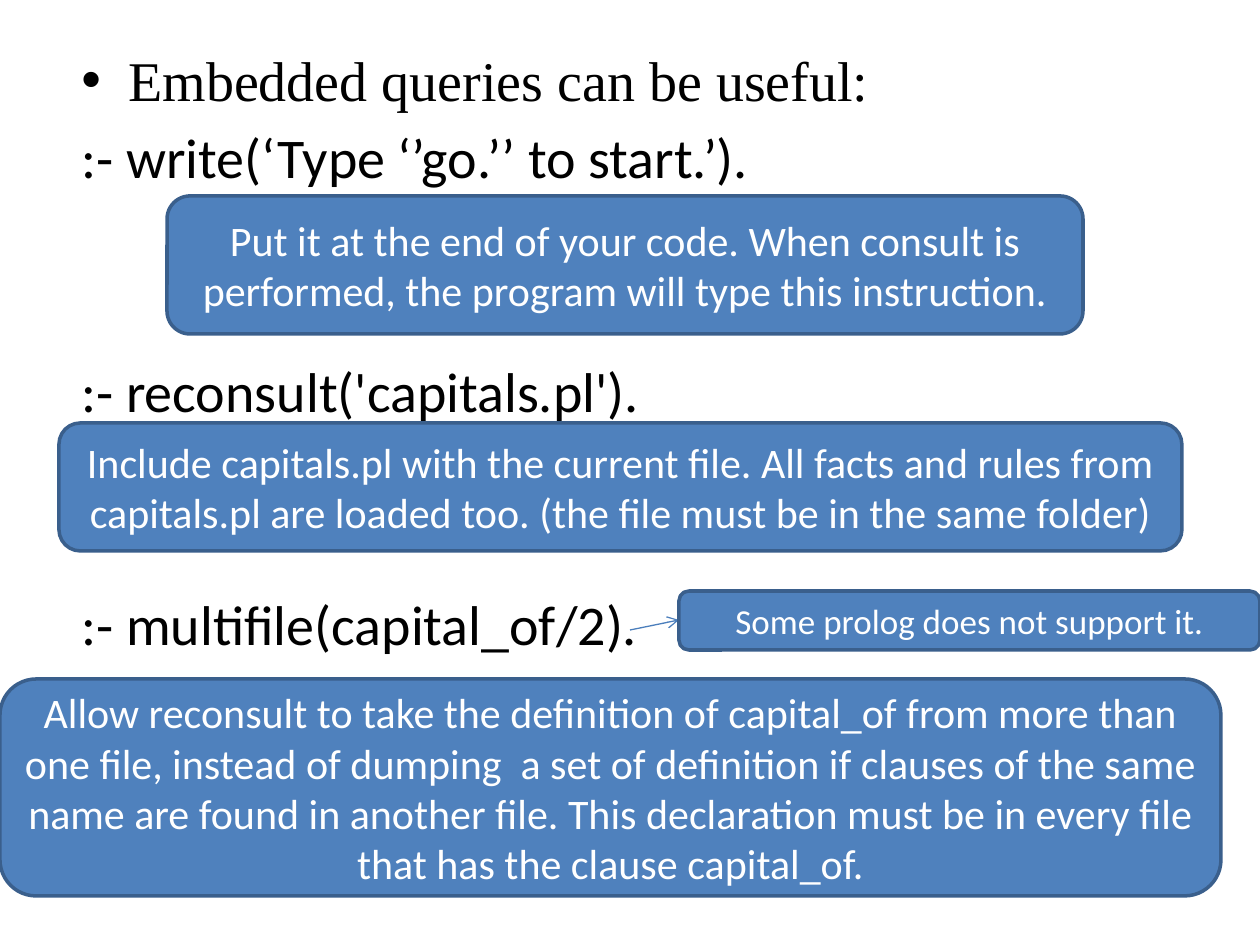
from lxml.etree import SubElement
from pptx import Presentation
from pptx.dml.color import RGBColor
from pptx.enum.shapes import MSO_CONNECTOR as Connector, MSO_SHAPE as Shape
from pptx.enum.text import MSO_ANCHOR as Anchor, PP_ALIGN as Align
from pptx.oxml.ns import qn
from pptx.util import Emu, Pt

PX = 914400 / 126


def px(length):
    return Emu(round(length * PX))


def color(hex_code):
    return RGBColor.from_string(hex_code)


def write(para, text, size=32, font="Calibri", ink="000000", align=Align.LEFT, before=0):
    para.alignment = align
    para.space_before = Pt(before)
    span = para.add_run()
    span.text = text
    span.font.size = Pt(size)
    span.font.name = font
    span.font.color.rgb = color(ink)


class Slide:
    fill, border, arrow_ink, callout_ink = "4F81BD", "3A5F8C", "4B7EBC", "FFFFFF"
    hanging = 47

    def __init__(self, deck):
        self.page = deck.slides.add_slide(deck.slide_layouts[6])

    def body(self, left, top, width, height, lines):
        box = self.page.shapes.add_textbox(px(left), px(top), px(width), px(height))
        frame = box.text_frame
        frame.word_wrap = True
        for index, (text, bullet, style) in enumerate(lines):
            para = frame.add_paragraph() if index else frame.paragraphs[0]
            write(para, text, **style)
            props = para._p.get_or_add_pPr()
            props.set("marL", str(px(self.hanging)))
            props.set("indent", str(-px(self.hanging)))
            if bullet:
                SubElement(props, qn("a:buFont")).set("typeface", "Arial")
                SubElement(props, qn("a:buChar")).set("char", bullet)
            else:
                SubElement(props, qn("a:buNone"))

    def callout(self, left, top, width, height, text, size=24):
        box = self.page.shapes.add_shape(
            Shape.ROUNDED_RECTANGLE, px(left), px(top), px(width), px(height))
        box.shadow.inherit = False
        box.fill.solid()
        box.fill.fore_color.rgb = color(self.fill)
        box.line.color.rgb = color(self.border)
        box.line.width = Pt(2)
        frame = box.text_frame
        frame.word_wrap = True
        frame.vertical_anchor = Anchor.MIDDLE
        write(frame.paragraphs[0], text, size=size, ink=self.callout_ink, align=Align.CENTER)

    def arrow(self, x1, y1, x2, y2):
        line = self.page.shapes.add_connector(
            Connector.STRAIGHT, px(x1), px(y1), px(x2), px(y2))
        line.line.color.rgb = color(self.arrow_ink)
        line.line.width = Pt(0.75)
        SubElement(line.line._get_or_add_ln(), qn("a:tailEnd")).set("type", "arrow")
        SubElement(line._element.spPr, qn("a:effectLst"))


def main():
    deck = Presentation()
    deck.slide_width, deck.slide_height = px(1260), px(945)
    slide = Slide(deck)

    # Directives, with room for a callout before the later ones
    near, far = 6, 95
    slide.body(69, 39, 1134, 847, [
        ("Embedded queries can be useful:", "•", dict(font="Times New Roman", before=near)),
        (":- write(‘Type ‘’go.’’ to start.’).", None, dict(before=near)),
        (":- reconsult('capitals.pl').", None, dict(before=far)),
        (":- multifile(capital_of/2).", None, dict(before=far)),
    ])

    # Explanation under each directive
    slide.callout(167, 196, 916, 138,
                  "Put it at the end of your code. When consult is performed, "
                  "the program will type this instruction.")
    slide.callout(59, 423, 1123, 128,
                  "Include capitals.pl with the current file. All facts and rules from "
                  "capitals.pl are loaded too. (the file must be in the same folder)")
    slide.callout(0, 679, 1221, 217,
                  "Allow reconsult to take the definition of capital_of from more than one "
                  "file, instead of dumping  a set of definition if clauses of the same name "
                  "are found in another file. This declaration must be in every file that "
                  "has the clause capital_of.")

    # Side note on multifile
    slide.arrow(630, 630, 679, 620)
    slide.callout(679, 591, 581, 59, "Some prolog does not support it.", size=20)

    deck.save("out.pptx")


if __name__ == "__main__":
    main()
